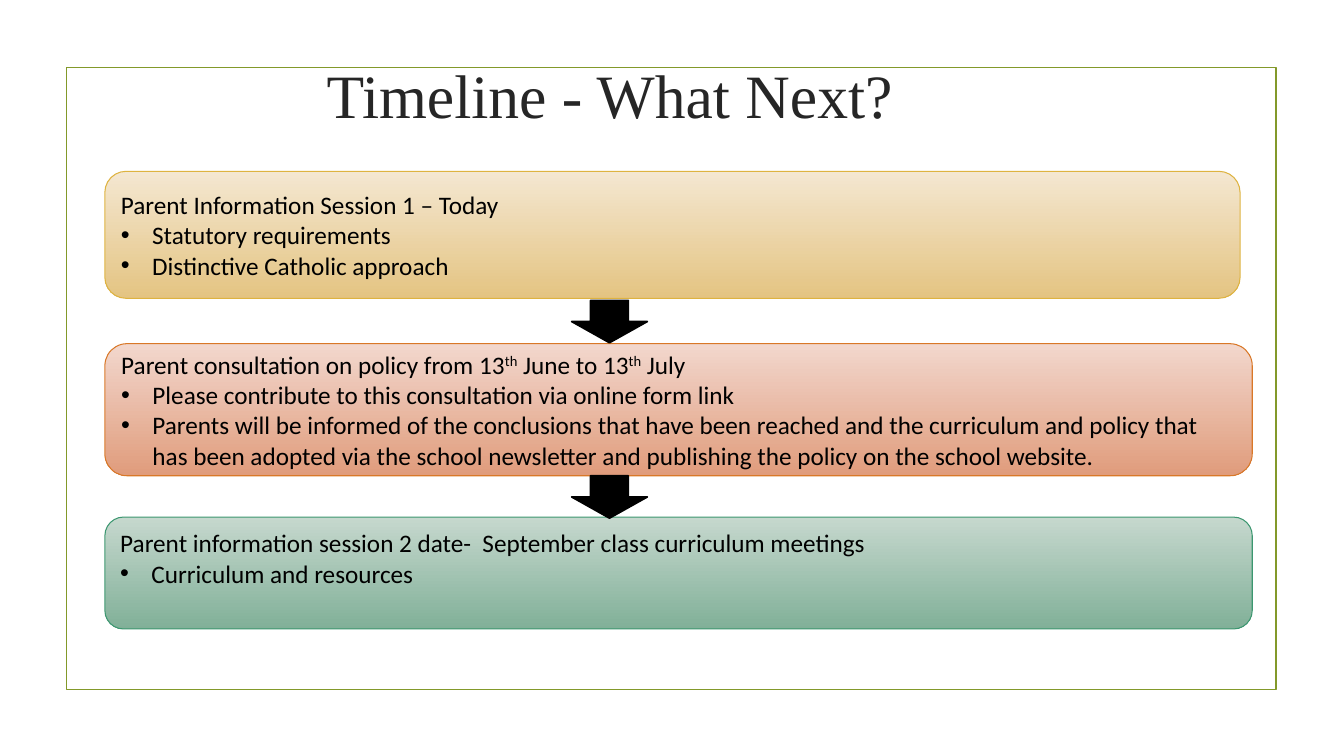
from pptx import Presentation
from pptx.dml.color import RGBColor
from pptx.enum.shapes import MSO_SHAPE
from pptx.enum.text import MSO_ANCHOR, PP_ALIGN
from pptx.oxml.ns import qn
from pptx.util import Inches, Pt
from lxml.etree import SubElement

COLORS = {"frame": "83992A", "title": "262626", "text": "000000", "arrow": "000000"}


def add_box(shapes, kind, left, top, width, height, line, weight):
    sp = shapes.add_shape(kind, Inches(left), Inches(top), Inches(width), Inches(height))
    sp.shadow.inherit = False
    sp.line.color.rgb = RGBColor.from_string(line)
    sp.line.width = Pt(weight)
    return sp


def add_run(p, text, font, size, color):
    r = p.add_run()
    r.text = text
    r.font.name = font
    r.font.size = Pt(size)
    r.font.color.rgb = RGBColor.from_string(color)
    return r


prs = Presentation()
prs.slide_width, prs.slide_height = Inches(13.33), Inches(7.5)
s = prs.slides.add_slide(prs.slide_layouts[5])

# Frame
frame = add_box(s.shapes, MSO_SHAPE.RECTANGLE, 0.66, 0.67, 12, 6.17, COLORS["frame"], 1.25)
frame.fill.background()

# Title
title = s.shapes.title
title.left, title.top = Inches(0.3), Inches(0.21)
title.width, title.height = Inches(11.5), Inches(1.45)
title.text_frame.vertical_anchor = MSO_ANCHOR.MIDDLE
p = title.text_frame.paragraphs[0]
p.alignment = PP_ALIGN.CENTER
add_run(p, "Timeline - What Next?", "Times New Roman", 44, COLORS["title"])

# Steps: top, width, height, bottom inset, gradient, line, heading runs, bullets
steps = [
    (1.7, 11.26, 1.26, 0.05, ("F4E7D1", "E4C482"), "DEB340",
     ["Parent Information Session 1 – Today"],
     ["Statutory requirements", "Distinctive Catholic approach"]),
    (3.41, 11.38, 1.31, 0.05, ("F2D7CD", "E09C7C"), "D97828",
     ["Parent consultation on policy from 13", "th", " June to 13", "th", " July"],
     ["Please contribute to this consultation via online form link",
      "Parents will be informed of the conclusions that have been reached and the "
      "curriculum and policy that has been adopted via the school newsletter and "
      "publishing the policy on the school website."]),
    (5.13, 11.38, 1.11, 0.35, ("C6D8CE", "81B098"), "3C9770",
     ["Parent information session 2 date-  September class curriculum meetings"],
     ["Curriculum and resources"]),
]
for top, width, height, inset, gradient, line, heading, bullets in steps:
    sp = add_box(s.shapes, MSO_SHAPE.ROUNDED_RECTANGLE, 1.04, top, width, height, line, 0.75)
    sp.fill.gradient()
    sp.fill.gradient_angle = 270
    for stop, color in zip(sp.fill.gradient_stops, gradient):
        stop.color.rgb = RGBColor.from_string(color)
    tf = sp.text_frame
    tf.word_wrap = True
    tf.vertical_anchor = MSO_ANCHOR.MIDDLE
    tf.margin_bottom = Inches(inset)
    p = tf.paragraphs[0]
    p.alignment = PP_ALIGN.LEFT
    for text in heading:
        r = add_run(p, text, "Calibri", 18, COLORS["text"])
        if text == "th":
            r.font._element.set("baseline", "30000")
    for text in bullets:
        p = tf.add_paragraph()
        p.alignment = PP_ALIGN.LEFT
        pPr = p._p.get_or_add_pPr()
        pPr.set("marL", str(Inches(0.31)))
        pPr.set("indent", str(Inches(-0.31)))
        SubElement(pPr, qn("a:buFont")).set("typeface", "Arial")
        SubElement(pPr, qn("a:buChar")).set("char", "•")
        add_run(p, text, "Calibri", 18, COLORS["text"])

# Arrows between the steps
for top in (2.98, 4.72):
    sp = add_box(s.shapes, MSO_SHAPE.DOWN_ARROW, 5.67, top, 0.75, 0.42, COLORS["arrow"], 1.25)
    sp.fill.solid()
    sp.fill.fore_color.rgb = RGBColor.from_string(COLORS["arrow"])

prs.save("out.pptx")
